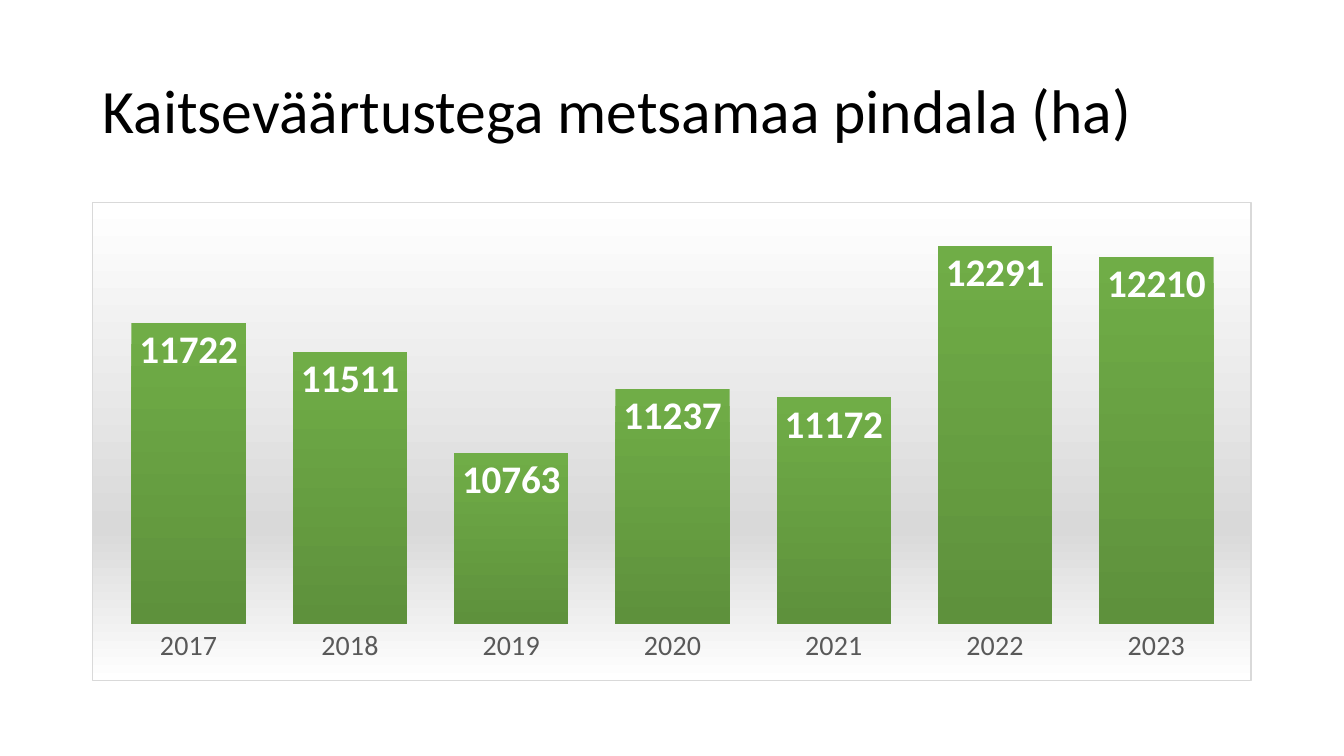
from lxml import etree
from pptx import Presentation
from pptx.chart.data import CategoryChartData
from pptx.dml.color import RGBColor
from pptx.enum.chart import XL_CHART_TYPE, XL_LABEL_POSITION, XL_TICK_MARK
from pptx.enum.text import MSO_ANCHOR, PP_ALIGN
from pptx.oxml import parse_xml
from pptx.oxml.ns import nsdecls
from pptx.util import Cm, Pt

COLUMNS = XL_CHART_TYPE.COLUMN_CLUSTERED
INSIDE_END = XL_LABEL_POSITION.INSIDE_END
NO_TICKS = XL_TICK_MARK.NONE
MIDDLE = MSO_ANCHOR.MIDDLE
LEFT = PP_ALIGN.LEFT
TITLE_ONLY = 5

COLORS = {
    "title": "000000",
    "axis": "595959",
    "label": "FFFFFF",
    "column_top": "70AD47",
    "column_bottom": "5E913C",
    "panel_light": "FFFFFF",
    "panel_dark": "D9D9D9",
}
PANEL_STOPS = [(0, "panel_light"), (68, "panel_dark"), (100, "panel_light")]
PLOT_LAYOUT = {"x": 0.013, "y": 0.032, "w": 0.975, "h": 0.85}
FOREST_AREA = {
    "2017": 11722,
    "2018": 11511,
    "2019": 10763,
    "2020": 11237,
    "2021": 11172,
    "2022": 12291,
    "2023": 12210,
}


class SlideBuilder:
    font_name = "Calibri"

    def __init__(self, presentation):
        layout = presentation.slide_layouts[TITLE_ONLY]
        self.slide = presentation.slides.add_slide(layout)

    def style_font(self, font, size, color, bold=False):
        font.name = self.font_name
        font.size = Pt(size)
        font.bold = bold
        font.color.rgb = RGBColor.from_string(COLORS[color])

    def add_title(self, text, left, top, width, height):
        title = self.slide.shapes.title
        title.left, title.top, title.width, title.height = left, top, width, height
        frame = title.text_frame
        frame.word_wrap = True
        frame.vertical_anchor = MIDDLE
        paragraph = frame.paragraphs[0]
        paragraph.alignment = LEFT
        paragraph.line_spacing = 0.9
        run = paragraph.add_run()
        run.text = text
        self.style_font(run.font, 44, "title")

    def add_column_chart(self, values, left, top, width, height):
        data = CategoryChartData()
        data.categories = list(values)
        data.add_series("Series 1", list(values.values()))
        chart = self.slide.shapes.add_chart(
            COLUMNS, left, top, width, height, data).chart
        chart.has_title = False
        chart.has_legend = False
        self.style_font(chart.font, 10, "title")
        self.style_axes(chart)
        self.style_columns(chart.plots[0])
        self.place_plot(chart)
        self.fill_panel(chart)

    def style_axes(self, chart):
        years = chart.category_axis
        years.major_tick_mark = years.minor_tick_mark = NO_TICKS
        years.format.line.fill.background()
        self.style_font(years.tick_labels.font, 20, "axis")
        hectares = chart.value_axis
        hectares.minimum_scale, hectares.maximum_scale = 9500, 12500
        hectares.has_major_gridlines = False
        hectares.visible = False

    def style_columns(self, plot):
        plot.gap_width = 41
        plot.overlap = -4
        plot.vary_by_categories = False
        columns = plot.series[0]
        fill = columns.format.fill
        fill.gradient()
        fill.gradient_angle = 270
        for stop, color in zip(fill.gradient_stops, ("column_top", "column_bottom")):
            stop.color.rgb = RGBColor.from_string(COLORS[color])
        columns.format.line.fill.background()
        labels = columns.data_labels
        labels.show_value = True
        labels.position = INSIDE_END
        self.style_font(labels.font, 28, "label", bold=True)

    def place_plot(self, chart):
        """Fix the inner plot area at fractions of the chart's size."""
        plot_area = chart.element.xpath("c:chart/c:plotArea")[0]
        for automatic in plot_area.xpath("c:layout"):
            plot_area.remove(automatic)
        layout = parse_xml(
            f'<c:layout {nsdecls("c")}><c:manualLayout>'
            '<c:layoutTarget val="inner"/><c:xMode val="edge"/><c:yMode val="edge"/>'
            '</c:manualLayout></c:layout>')
        target = layout[0][0]
        for key, fraction in PLOT_LAYOUT.items():
            etree.SubElement(layout[0], target.tag.replace("layoutTarget", key),
                             val=str(fraction))
        plot_area.insert(0, layout)

    def fill_panel(self, chart):
        """Give the chart area its vertical gradient and thin border."""
        stops = "".join(
            f'<a:gs pos="{position * 1000}"><a:srgbClr val="{COLORS[color]}"/></a:gs>'
            for position, color in PANEL_STOPS)
        panel = parse_xml(
            f'<c:spPr {nsdecls("c", "a")}>'
            f'<a:gradFill><a:gsLst>{stops}</a:gsLst>'
            '<a:lin ang="5400000" scaled="0"/></a:gradFill>'
            f'<a:ln w="{Pt(0.75)}"><a:solidFill>'
            f'<a:srgbClr val="{COLORS["panel_dark"]}"/></a:solidFill></a:ln></c:spPr>')
        chart.element.xpath("c:chart")[0].addnext(panel)


def main():
    presentation = Presentation()
    presentation.slide_width, presentation.slide_height = Cm(33.87), Cm(19.05)
    builder = SlideBuilder(presentation)
    left, width = Cm(2.33), Cm(29.21)
    builder.add_title("Kaitseväärtustega metsamaa pindala (ha)",
                      left, Cm(1.01), width, Cm(3.68))
    builder.add_column_chart(FOREST_AREA, left, Cm(5.08), width, Cm(12.09))
    presentation.save("out.pptx")


if __name__ == "__main__":
    main()
